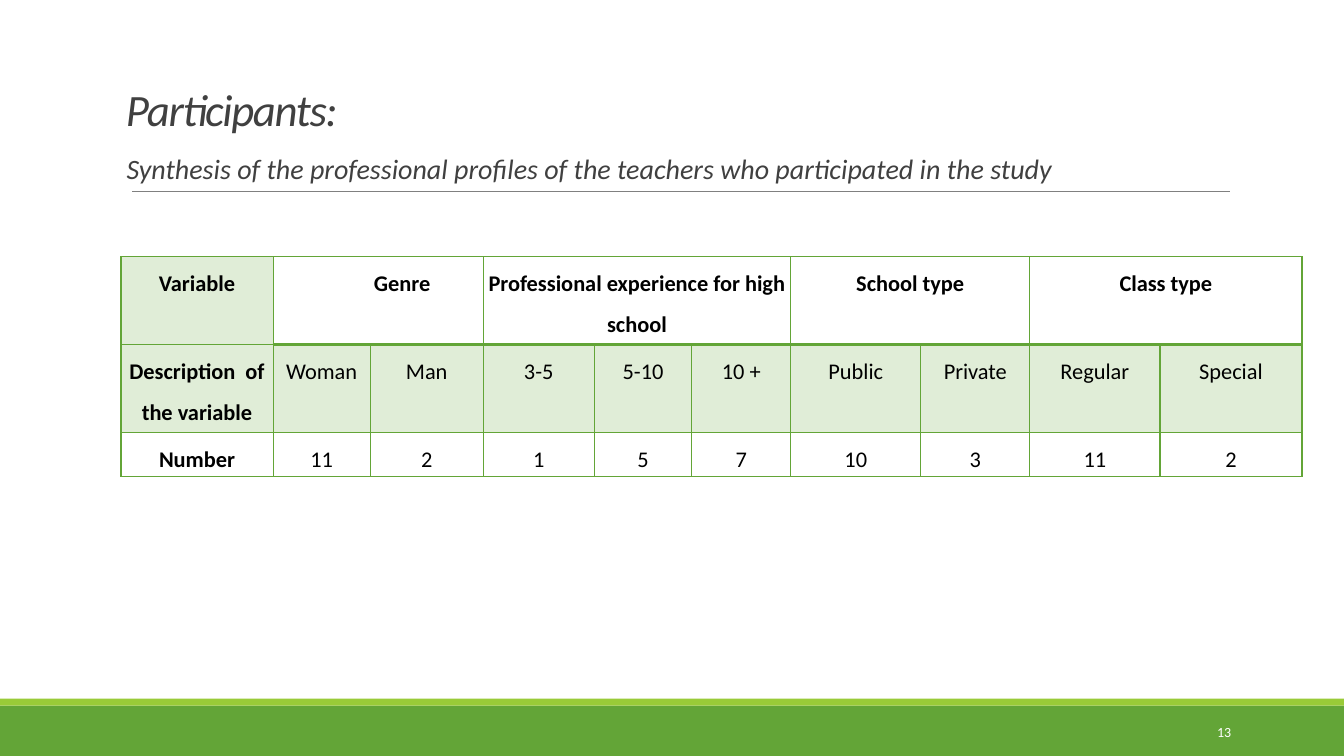
from lxml import etree
from pptx import Presentation
from pptx.dml.color import RGBColor
from pptx.enum.shapes import MSO_CONNECTOR as CONN, MSO_SHAPE as SHAPE
from pptx.enum.text import MSO_ANCHOR as ANCHOR, PP_ALIGN as ALIGN
from pptx.oxml import parse_xml
from pptx.oxml.ns import nsdecls, qn
from pptx.util import Pt

GREEN = RGBColor(0x63, 0xA5, 0x37)
LIME = RGBColor(0x99, 0xCB, 0x38)
PALE = RGBColor(0xE0, 0xED, 0xD7)
GRAY = RGBColor(0x80, 0x80, 0x80)
DARK = RGBColor(0x40, 0x40, 0x40)
BLACK = RGBColor(0, 0, 0)
WHITE = RGBColor(0xFF, 0xFF, 0xFF)
FONT = "Calibri"

COL_WIDTHS = [108.7, 69.4, 80.7, 79.3, 69.8, 70.6, 93, 77.8, 93, 101.5]
ROW_HEIGHTS = [62.8, 62.8, 31.4]
GROUPS = [("Variable", 1), ("Genre", 2),
          ("Professional experience for high school", 3),
          ("School type", 2), ("Class type", 2)]
DESCRIPTIONS = ["Description  of the variable", "Woman", "Man", "3-5", "5-10",
                "10 +", "Public", "Private", "Regular", "Special"]
NUMBERS = ["Number", "11", "2", "1", "5", "7", "10", "3", "11", "2"]


def add_run(p, text, size, color, bold=False, italic=False):
    r = p.add_run()
    r.text = text
    r.font.name = FONT
    r.font.size = Pt(size)
    r.font.color.rgb = color
    r.font.bold = bold
    r.font.italic = italic
    return r


def add_text(slide, box, margin, anchor, align, spacing=1.0):
    tf = slide.shapes.add_textbox(*map(Pt, box)).text_frame
    tf.word_wrap = True
    tf.vertical_anchor = anchor
    tf.margin_left = tf.margin_right = Pt(margin[0])
    tf.margin_top = tf.margin_bottom = Pt(margin[1])
    p = tf.paragraphs[0]
    p.alignment = align
    p.line_spacing = spacing
    return p


def add_header(slide, left, top, width, height):
    p = add_text(slide, (left, top, width, height - 36), (3.6, 3.6),
                 ANCHOR.BOTTOM, ALIGN.LEFT, 0.85)
    r = add_run(p, "Participants:", 32, DARK, italic=True)
    r.font._element.set("spc", "-100")
    p = add_text(slide, (left, top + height - 26, width, 26), (4, 0),
                 ANCHOR.TOP, ALIGN.LEFT, 0.9)
    add_run(p, "Synthesis of the professional profiles of the teachers "
               "who participated in the study", 20, DARK, italic=True)
    y = top + height
    rule = slide.shapes.add_connector(CONN.STRAIGHT, Pt(left + 8), Pt(y),
                                      Pt(left + width), Pt(y))
    rule.line.color.rgb = GRAY
    rule.line.width = Pt(0.5)
    etree.SubElement(rule._element.spPr, qn("a:effectLst"))


def add_borders(cell, top, bottom):
    tcPr = cell._tc.get_or_add_tcPr()
    for side, weight in (("L", 1), ("R", 1), ("T", top), ("B", bottom)):
        tcPr.append(parse_xml(
            f'<a:ln{side} {nsdecls("a")} w="{Pt(weight)}"><a:solidFill>'
            f'<a:srgbClr val="{GREEN}"/></a:solidFill></a:ln{side}>'))


def fill_cell(cell, text, bold):
    cell.vertical_anchor = ANCHOR.TOP
    p = cell.text_frame.paragraphs[0]
    p.alignment = ALIGN.CENTER
    p.line_spacing = 1.5
    add_run(p, text, 16, BLACK, bold)


def add_participants(slide, left, top, width):
    frame = slide.shapes.add_table(len(ROW_HEIGHTS), len(COL_WIDTHS), Pt(left),
                                   Pt(top), Pt(width), Pt(sum(ROW_HEIGHTS)))
    table = frame.table
    scale = width / sum(COL_WIDTHS)
    for col, w in zip(table.columns, COL_WIDTHS):
        col.width = Pt(w * scale)
    for row, h in zip(table.rows, ROW_HEIGHTS):
        row.height = Pt(h)
    for i, row in enumerate(table.rows):
        for j, cell in enumerate(row.cells):
            cell.margin_left = cell.margin_right = 0
            cell.margin_top = cell.margin_bottom = 0
            thick = 2 if j else 1
            add_borders(cell, thick if i == 1 else 1, thick if i == 0 else 1)
            if i == 1 or (i, j) == (0, 0):
                cell.fill.solid()
                cell.fill.fore_color.rgb = PALE
            else:
                cell.fill.background()
    j = 0
    for text, span in GROUPS:
        cell = table.cell(0, j)
        if span > 1:
            cell.merge(table.cell(0, j + span - 1))
        fill_cell(cell, text, True)
        if text == "Genre":
            cell.margin_left = Pt(72)
            cell.text_frame.paragraphs[0].alignment = ALIGN.LEFT
        j += span
    for i, texts in enumerate((DESCRIPTIONS, NUMBERS), 1):
        for j, text in enumerate(texts):
            fill_cell(table.cell(i, j), text, j == 0)


def add_footer(slide, left, top, width, height):
    stripe = 5
    for y, h, color in ((top + stripe, height - stripe, GREEN),
                        (top, stripe, LIME)):
        sp = slide.shapes.add_shape(SHAPE.RECTANGLE, Pt(left), Pt(y),
                                    Pt(width), Pt(h))
        sp.shadow.inherit = False
        sp.fill.solid()
        sp.fill.fore_color.rgb = color
        sp.line.fill.background()
    p = add_text(slide, (left + width - 117, top + 15, 40, 18), (3.6, 3.6),
                 ANCHOR.MIDDLE, ALIGN.RIGHT)
    add_run(p, "13", 10, WHITE)


def main():
    prs = Presentation()
    prs.slide_width, prs.slide_height = Pt(960), Pt(540)
    slide = prs.slides.add_slide(prs.slide_layouts[6])
    add_footer(slide, 0, 499, 960, 41)
    add_header(slide, 86.4, 22.5, 792, 114.3)
    add_participants(slide, 86.4, 183.4, 843.8)
    prs.save("out.pptx")


if __name__ == "__main__":
    main()
